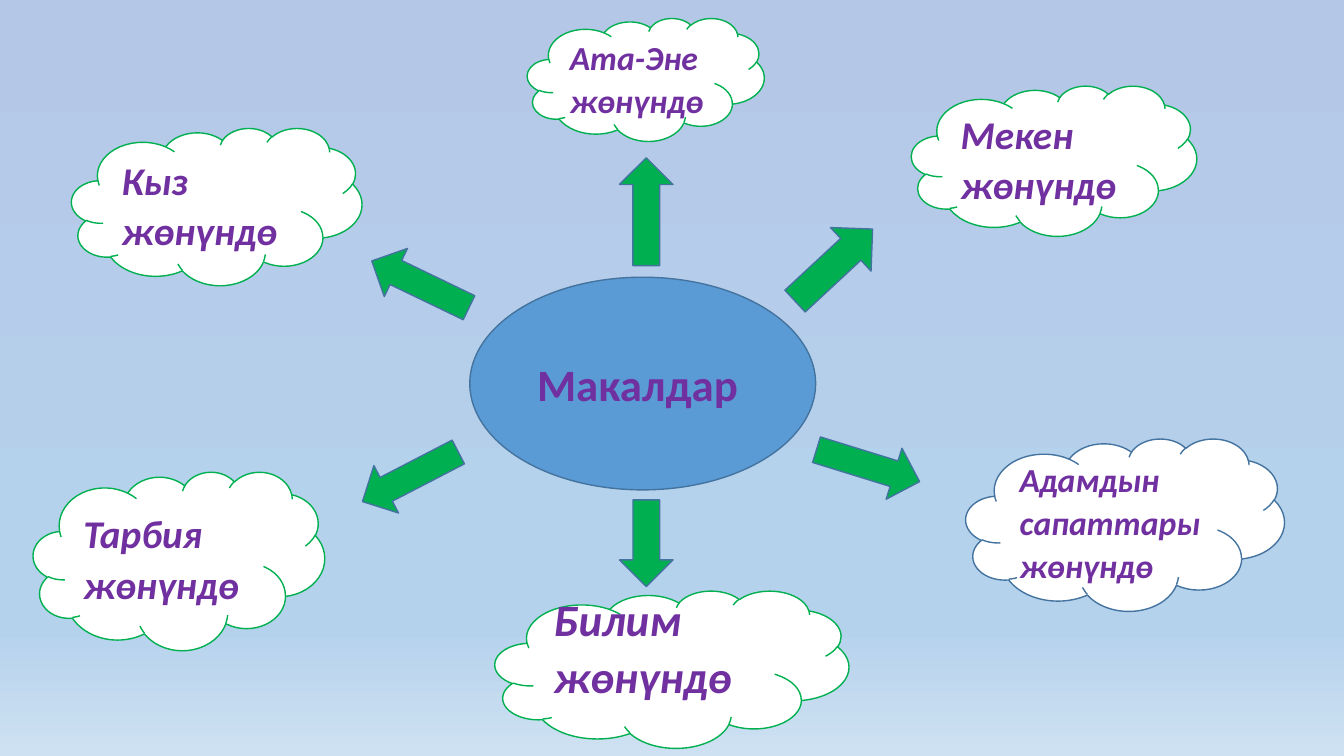
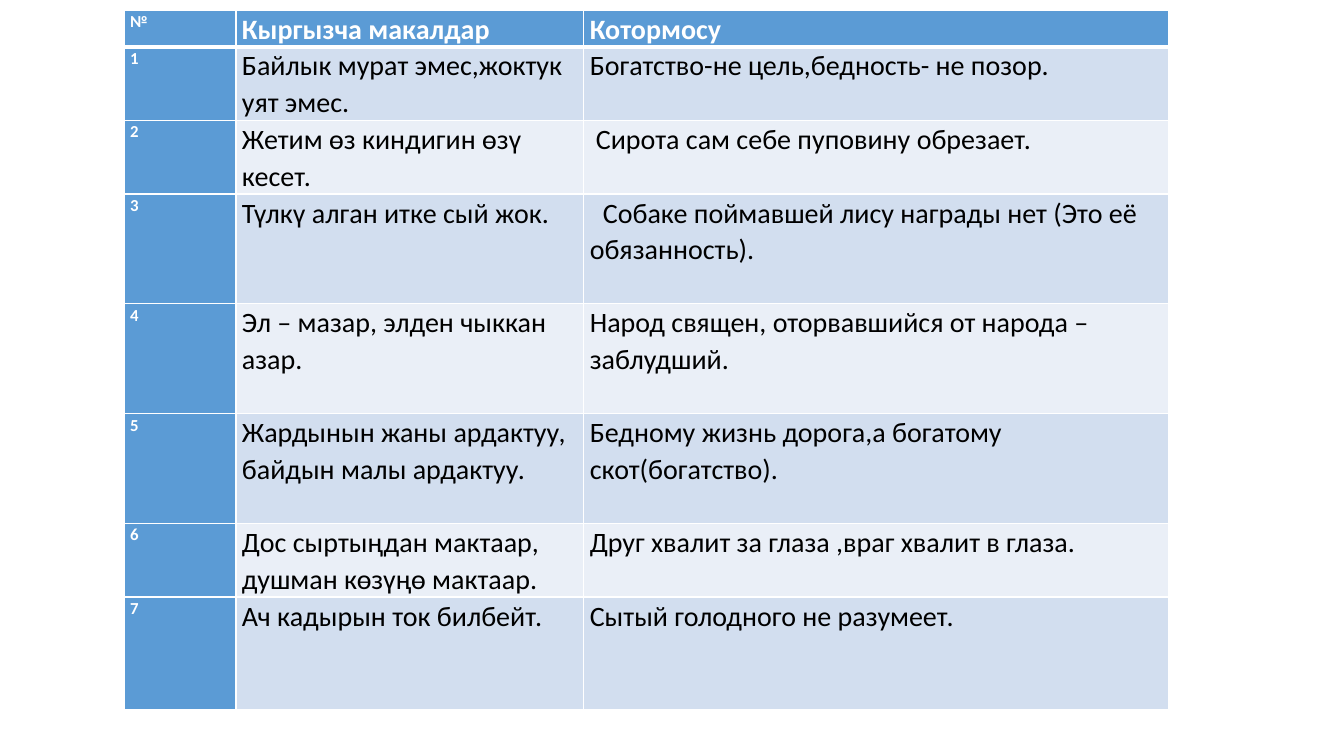
from copy import deepcopy
from lxml import etree
from pptx import Presentation
from pptx import util as u
from pptx.dml import color
from pptx.enum import shapes, text
from pptx.oxml import ns

IN = u.Inches
KIND = shapes.MSO_SHAPE
SIDE = text.PP_ALIGN
WHITE, BLUE, NAVY, GREEN = "FFFFFF", "5B9BD5", "43739E", "00B050"
PURPLE, BLACK = "7030A0", "000000"
BANDS = ["D2DEEF", "EAEFF7"]


def tint(part, hue):
    part.solid()
    part.fore_color.rgb = color.RGBColor.from_string(hue)


def write(frame, words, size, hue, bold=True, italic=False, align=SIDE.LEFT,
          lead=1.07, after=0, indent=0, edge=None):
    frame.word_wrap = True
    para = frame.paragraphs[0]
    para.alignment = align
    para.line_spacing = lead
    para.space_after = u.Pt(after)
    if indent:
        para._p.get_or_add_pPr().set("indent", str(IN(indent)))
    run = para.add_run()
    run.text = words
    font = run.font
    font.name, font.size, font.bold, font.italic = "Calibri", u.Pt(size), bold, italic
    tint(font.fill, hue)
    if edge:
        line = etree.Element(ns.qn("a:ln"), w=str(u.Pt(0.75)))
        fill = etree.SubElement(line, ns.qn("a:solidFill"))
        etree.SubElement(fill, ns.qn("a:srgbClr"), val=edge)
        font._element.insert(0, line)


deck = Presentation()
deck.slide_width, deck.slide_height = IN(13.33), IN(7.5)
blank = deck.slide_layouts[6]

web = deck.slides.add_slide(blank)
fill = web.background.fill
fill.gradient()
fill.gradient_angle = 270
stops = web.element.find(".//" + ns.qn("a:gsLst"))
for _ in range(2):
    stops.append(deepcopy(stops[0]))
shades = [(0, "B4C7E7"), (0.74, "B5D2EC"), (0.83, "B5D2EC"), (1, "CEE1F2")]
for stop, (place, hue) in zip(fill.gradient_stops, shades):
    stop.position = place
    stop.color.rgb = color.RGBColor.from_string(hue)

hub = (KIND.OVAL, 4.66, 2.75, 3.43, 2.11, 0, BLUE, NAVY)
arrows = [
    (4.17, 2.82, 1.07, 0.53, 205.7),
    (8.27, 2.63, 1.05, 0.59, 317.1),
    (6.41, 2.1, 1.07, 0.53, 270),
    (6.41, 5.39, 0.86, 0.53, 90),
    (4.07, 4.73, 1.07, 0.53, 152.6),
    (8.61, 4.62, 1.07, 0.53, 17.2),
]
clouds = [
    ("Кыз жөнүндө", 28, 0.71, 1.27, 2.88, 1.56, GREEN),
    ("Мекен жөнүндө", 28, 9.04, 0.85, 2.83, 1.49, GREEN),
    ("Ата-Эне жөнүндө", 24, 5.23, 0.18, 2.35, 1.22, GREEN),
    ("Тарбия жөнүндө", 28, 0.33, 4.68, 2.89, 1.77, GREEN),
    ("Билим жөнүндө", 32, 4.91, 5.86, 3.51, 1.56, GREEN),
    ("Адамдын сапаттары жөнүндө", 24, 9.58, 4.35, 3.16, 1.71, NAVY),
]
items = [hub]
for x, y, long, wide, turn in arrows:
    items.append((KIND.RIGHT_ARROW, x - long / 2, y - wide / 2, long, wide, turn, GREEN, NAVY))
for words, size, x, y, wide, high, rim in clouds:
    items.append((KIND.CLOUD, x, y, wide, high, 0, WHITE, rim))

drawn = []
for kind, x, y, wide, high, turn, hue, rim in items:
    shape = web.shapes.add_shape(kind, IN(x), IN(y), IN(wide), IN(high))
    shape.rotation = turn
    shape.shadow.inherit = False
    tint(shape.fill, hue)
    tint(shape.line.fill, rim)
    shape.line.width = u.Pt(1)
    shape.text_frame.vertical_anchor = text.MSO_ANCHOR.MIDDLE
    drawn.append(shape)

write(drawn[0].text_frame, "Макалдар ", 32, PURPLE, align=SIDE.CENTER, lead=1, edge=WHITE)
puffs = drawn[-len(clouds):]
for puff, (words, size, *rest) in zip(puffs, clouds):
    write(puff.text_frame, words, size, PURPLE, italic=True, after=8, edge=WHITE)
puffs[4].text_frame.margin_bottom = IN(0.45)

page = deck.slides.add_slide(blank)
rows = [
    ("Кыргызча макалдар", "Котормосу", 0.36, 0),
    ("Байлык мурат эмес,жоктук уят эмес.", "Богатство-не цель,бедность- не позор.", 0.73, 0),
    ("Жетим өз киндигин өзү кесет.", "Сирота сам себе пуповину обрезает.", 0.73, 0.06),
    ("Түлкү алган итке сый жок.",
     "Собаке поймавшей лису награды нет (Это её обязанность).", 1.09, 0.13),
    ("Эл – мазар, элден чыккан азар.",
     "Народ священ, оторвавшийся от народа – заблудший.", 1.09, 0),
    ("Жардынын жаны ардактуу, байдын малы ардактуу.",
     "Бедному жизнь дорога,а богатому скот(богатство).", 1.09, 0),
    ("Дос сыртыңдан мактаар, душман көзүңө мактаар.",
     "Друг хвалит за глаза ,враг хвалит в глаза.", 0.73, 0),
    ("Ач кадырын ток билбейт.", "Сытый голодного не разумеет.", 1.12, 0),
]
cols = [1.11, 3.45, 5.8]
high = sum(row[2] for row in rows)
grid = page.shapes.add_table(len(rows), len(cols), IN(1.23), IN(0.1), IN(sum(cols)), IN(high)).table
for c, wide in enumerate(cols):
    grid.columns[c].width = IN(wide)
for r, (saying, sense, tall, indent) in enumerate(rows):
    grid.rows[r].height = IN(tall)
    for c, words in enumerate([str(r) if r else "№", saying, sense]):
        cell = grid.cell(r, c)
        head = r == 0 or c == 0
        cell.margin_left = cell.margin_right = IN(0.06)
        cell.margin_top = cell.margin_bottom = 0
        tint(cell.fill, BLUE if head else BANDS[(r - 1) % 2])
        write(cell.text_frame, words, 20 if c else 12, WHITE if head else BLACK,
              bold=head, indent=indent if c == 2 else 0)
        props = cell._tc.get_or_add_tcPr()
        for n, side in enumerate(["lnL", "lnR", "lnT", "lnB"]):
            thick = (r, side) in [(0, "lnB"), (1, "lnT")]
            rule = etree.Element(ns.qn("a:" + side), w=str(u.Pt(3 if thick else 1)))
            paint = etree.SubElement(rule, ns.qn("a:solidFill"))
            etree.SubElement(paint, ns.qn("a:srgbClr"), val=WHITE)
            props.insert(n, rule)

deck.save("out.pptx")
